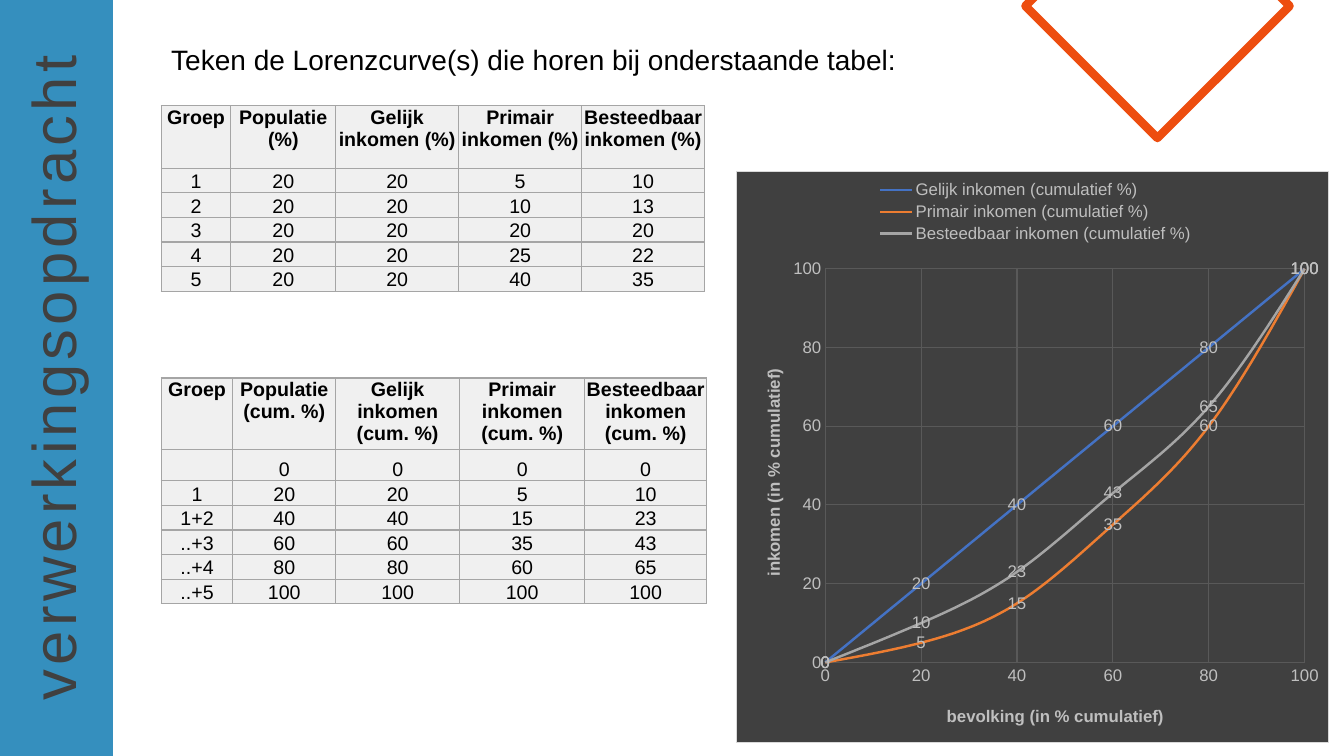
from itertools import accumulate

from pptx import Presentation
from pptx.chart.data import CategoryChartData
from pptx.dml.color import RGBColor
from pptx.enum.chart import XL_CHART_TYPE, XL_LABEL_POSITION, XL_LEGEND_POSITION, XL_MARKER_STYLE, XL_TICK_MARK
from pptx.enum.shapes import MSO_SHAPE
from pptx.enum.text import MSO_ANCHOR, PP_ALIGN
from pptx.oxml import parse_xml
from pptx.oxml.ns import nsdecls, qn
from pptx.util import Inches, Pt

LINE_CHART = XL_CHART_TYPE.LINE
LABEL_CENTER = XL_LABEL_POSITION.CENTER
LEGEND_TOP = XL_LEGEND_POSITION.TOP
NO_MARKER = XL_MARKER_STYLE.NONE
NO_TICK = XL_TICK_MARK.NONE
RECTANGLE = MSO_SHAPE.RECTANGLE
ANCHOR_TOP, ANCHOR_BOTTOM = MSO_ANCHOR.TOP, MSO_ANCHOR.BOTTOM
LEFT, CENTER = PP_ALIGN.LEFT, PP_ALIGN.CENTER

FONT = "Arial"
BLACK = RGBColor(0x00, 0x00, 0x00)
DARK_GRAY = RGBColor(0x40, 0x40, 0x40)
GRID_GRAY = RGBColor(0x59, 0x59, 0x59)
MID_GRAY = RGBColor(0xA5, 0xA5, 0xA5)
LIGHT_GRAY = RGBColor(0xBF, 0xBF, 0xBF)
BORDER_GRAY = RGBColor(0xD9, 0xD9, 0xD9)
CELL_GRAY = RGBColor(0xF0, 0xF0, 0xF0)
BAND_BLUE = RGBColor(0x1A, 0x80, 0xB6)
BLUE = RGBColor(0x44, 0x72, 0xC4)
ORANGE = RGBColor(0xED, 0x7D, 0x31)
DIAMOND_ORANGE = RGBColor(0xED, 0x4D, 0x0F)

GROUP_SHARES = {
    "Populatie": [20, 20, 20, 20, 20],
    "Gelijk inkomen": [20, 20, 20, 20, 20],
    "Primair inkomen": [5, 10, 20, 25, 40],
    "Besteedbaar inkomen": [10, 13, 20, 22, 35],
}
CUMULATIVE_SHARES = {name: [0, *accumulate(shares)] for name, shares in GROUP_SHARES.items()}
CURVE_COLORS = {"Gelijk inkomen": BLUE, "Primair inkomen": ORANGE, "Besteedbaar inkomen": MID_GRAY}


def style_font(font, size, color, bold=False):
    font.name, font.size, font.bold = FONT, Pt(size), bold
    font.color.rgb = color


def write_text(text_frame, text, size=14, color=BLACK, bold=False, align=LEFT, line_spacing=None, tracking=None):
    paragraph = text_frame.paragraphs[0]
    paragraph.alignment = align
    if line_spacing:
        paragraph.line_spacing = line_spacing
    run = paragraph.add_run()
    run.text = text
    style_font(run.font, size, color, bold)
    if tracking:
        run.font._element.set("spc", str(tracking * 100))


def add_diamond(slide, center, middle, radius, cut):
    """Draw a diamond outline whose top corner is cut off `cut` above its middle."""
    half_top = radius - cut
    builder = slide.shapes.build_freeform(Inches(center - half_top), Inches(middle - cut), scale=1.0)
    corners = [(half_top, -cut), (radius, 0), (0, radius), (-radius, 0)]
    builder.add_line_segments([(Inches(center + x), Inches(middle + y)) for x, y in corners], close=True)
    diamond = builder.convert_to_shape()
    diamond.shadow.inherit = False
    diamond.fill.background()
    diamond.line.color.rgb = DIAMOND_ORANGE
    diamond.line.width = Pt(6)


def add_side_band(slide, left, top, width, height):
    band = slide.shapes.add_shape(RECTANGLE, Inches(left), Inches(top), Inches(width), Inches(height))
    band.shadow.inherit = False
    band.line.fill.background()
    band.fill.solid()
    band.fill.fore_color.rgb = BAND_BLUE
    band_color = band._element.spPr.find(".//" + qn("a:srgbClr"))
    band_color.append(parse_xml(f'<a:alpha {nsdecls("a")} val="88000"/>'))

    length, thickness = 6.7, 0.84
    label_left = left + (width - length) / 2 - 0.04
    label_top = top + (height - thickness) / 2 - 0.05
    label = slide.shapes.add_textbox(Inches(label_left), Inches(label_top), Inches(length), Inches(thickness))
    label.rotation = 270
    label.text_frame.word_wrap = False
    write_text(label.text_frame, "verwerkingsopdracht", size=44, color=DARK_GRAY, tracking=3)


def add_heading(slide, left, top, width, height):
    heading = slide.shapes.add_textbox(Inches(left), Inches(top), Inches(width), Inches(height))
    heading.text_frame.word_wrap = True
    write_text(heading.text_frame, "Teken de Lorenzcurve(s) die horen bij onderstaande tabel:", size=20, line_spacing=0.9)


def style_cell(cell, text, is_header):
    cell.margin_left = cell.margin_right = cell.margin_top = Inches(0.01)
    cell.margin_bottom = 0
    cell.vertical_anchor = ANCHOR_TOP if is_header else ANCHOR_BOTTOM
    cell.fill.solid()
    cell.fill.fore_color.rgb = CELL_GRAY
    write_text(cell.text_frame, text, bold=is_header, align=CENTER)
    properties = cell._tc.get_or_add_tcPr()
    for index, side in enumerate("LRTB"):
        properties.insert(index, parse_xml(
            f'<a:ln{side} {nsdecls("a")} w="12700"><a:solidFill><a:srgbClr val="{MID_GRAY}"/></a:solidFill></a:ln{side}>'))


def add_share_table(slide, left, top, column_widths, header_height, unit, groups, shares):
    row_height = 0.23
    header = ["Groep"] + [f"{name} ({unit})" for name in shares]
    rows = [header, *zip(groups, *shares.values())]
    frame = slide.shapes.add_table(
        len(rows), len(header), Inches(left), Inches(top),
        Inches(sum(column_widths)), Inches(header_height + row_height * len(groups)))
    table = frame.table
    table.horz_banding = False
    for column, width in zip(table.columns, column_widths):
        column.width = Inches(width)
    for row_index, values in enumerate(rows):
        table.rows[row_index].height = Inches(row_height if row_index else header_height)
        for column_index, value in enumerate(values):
            style_cell(table.cell(row_index, column_index), str(value), row_index == 0)


def set_layout(element, index, target=None, **fractions):
    """Fix the place of a chart part, in fractions of the chart area."""
    for old_layout in element.findall(qn("c:layout")):
        element.remove(old_layout)
    settings = f'<c:layoutTarget val="{target}"/>' if target else ""
    settings += "".join(f'<c:{key}Mode val="edge"/>' for key in "xy")
    settings += "".join(f'<c:{key} val="{value}"/>' for key, value in fractions.items())
    element.insert(index, parse_xml(
        f'<c:layout {nsdecls("c")}><c:manualLayout>{settings}</c:manualLayout></c:layout>'))


def style_axis(axis, title, x, y):
    axis.has_major_gridlines = True
    axis.major_gridlines.format.line.color.rgb = GRID_GRAY
    axis.major_gridlines.format.line.width = Pt(0.75)
    axis.major_tick_mark = axis.minor_tick_mark = NO_TICK
    axis.format.line.fill.background()
    style_font(axis.tick_labels.font, 12, LIGHT_GRAY)
    write_text(axis.axis_title.text_frame, title, size=12, color=LIGHT_GRAY, bold=True)
    set_layout(axis.axis_title._element, 1, x=x, y=y)


def add_lorenz_chart(slide, left, top, width, height):
    data = CategoryChartData()
    data.categories = [str(share) for share in CUMULATIVE_SHARES["Populatie"]]
    for name in CURVE_COLORS:
        data.add_series(f"{name} (cumulatief %)", CUMULATIVE_SHARES[name])
    chart = slide.shapes.add_chart(
        LINE_CHART, Inches(left), Inches(top), Inches(width), Inches(height), data).chart
    chart.has_title = False
    style_font(chart.font, 10, BLACK)
    chart._chartSpace.find(qn("c:txPr")).addprevious(parse_xml(
        f'<c:spPr {nsdecls("c", "a")}><a:solidFill><a:srgbClr val="{DARK_GRAY}"/></a:solidFill>'
        f'<a:ln w="9525"><a:solidFill><a:srgbClr val="{BORDER_GRAY}"/></a:solidFill></a:ln></c:spPr>'))

    chart.plots[0].vary_by_categories = False
    for series, color in zip(chart.plots[0].series, CURVE_COLORS.values()):
        series.smooth = True
        series.marker.style = NO_MARKER
        series.format.line.color.rgb = color
        series.format.line.width = Pt(1.75)
        series.data_labels.show_value = True
        series.data_labels.position = LABEL_CENTER
        style_font(series.data_labels.font, 12, LIGHT_GRAY)

    style_axis(chart.category_axis, "bevolking (in % cumulatief)", x=0.35, y=0.93)
    style_axis(chart.value_axis, "inkomen (in % cumulatief)", x=0.04, y=0.34)
    chart.value_axis.minimum_scale = 0
    chart.value_axis.maximum_scale = 100
    chart.value_axis.major_unit = 20
    chart.value_axis._element.find(qn("c:majorUnit")).addprevious(
        parse_xml(f'<c:crossBetween {nsdecls("c")} val="midCat"/>'))

    chart.has_legend = True
    chart.legend.position = LEGEND_TOP
    chart.legend.include_in_layout = False
    style_font(chart.legend.font, 12, LIGHT_GRAY)
    set_layout(chart.legend._element, 1, x=0.23, y=0.01, w=0.55, h=0.12)
    set_layout(chart._chartSpace.chart.plotArea, 0, target="inner", x=0.15, y=0.17, w=0.81, h=0.69)


def main():
    presentation = Presentation()
    presentation.slide_width, presentation.slide_height = Inches(13.33), Inches(7.5)
    slide = presentation.slides.add_slide(presentation.slide_layouts[6])
    add_diamond(slide, center=11.48, middle=0.06, radius=1.31, cut=0.13)
    add_side_band(slide, 0, -0.01, 1.12, 7.51)
    add_heading(slide, 1.6, 0.41, 11.4, 0.5)
    add_share_table(slide, 1.6, 1.05, [0.69, 1.04, 1.22, 1.22, 1.22], 0.62, "%",
                    ["1", "2", "3", "4", "5"], GROUP_SHARES)
    add_share_table(slide, 1.6, 3.75, [0.71, 1.02, 1.23, 1.24, 1.21], 0.67, "cum. %",
                    ["", "1", "1+2", "..+3", "..+4", "..+5"], CUMULATIVE_SHARES)
    add_lorenz_chart(slide, 7.3, 1.7, 5.88, 5.67)
    presentation.save("out.pptx")


if __name__ == "__main__":
    main()
